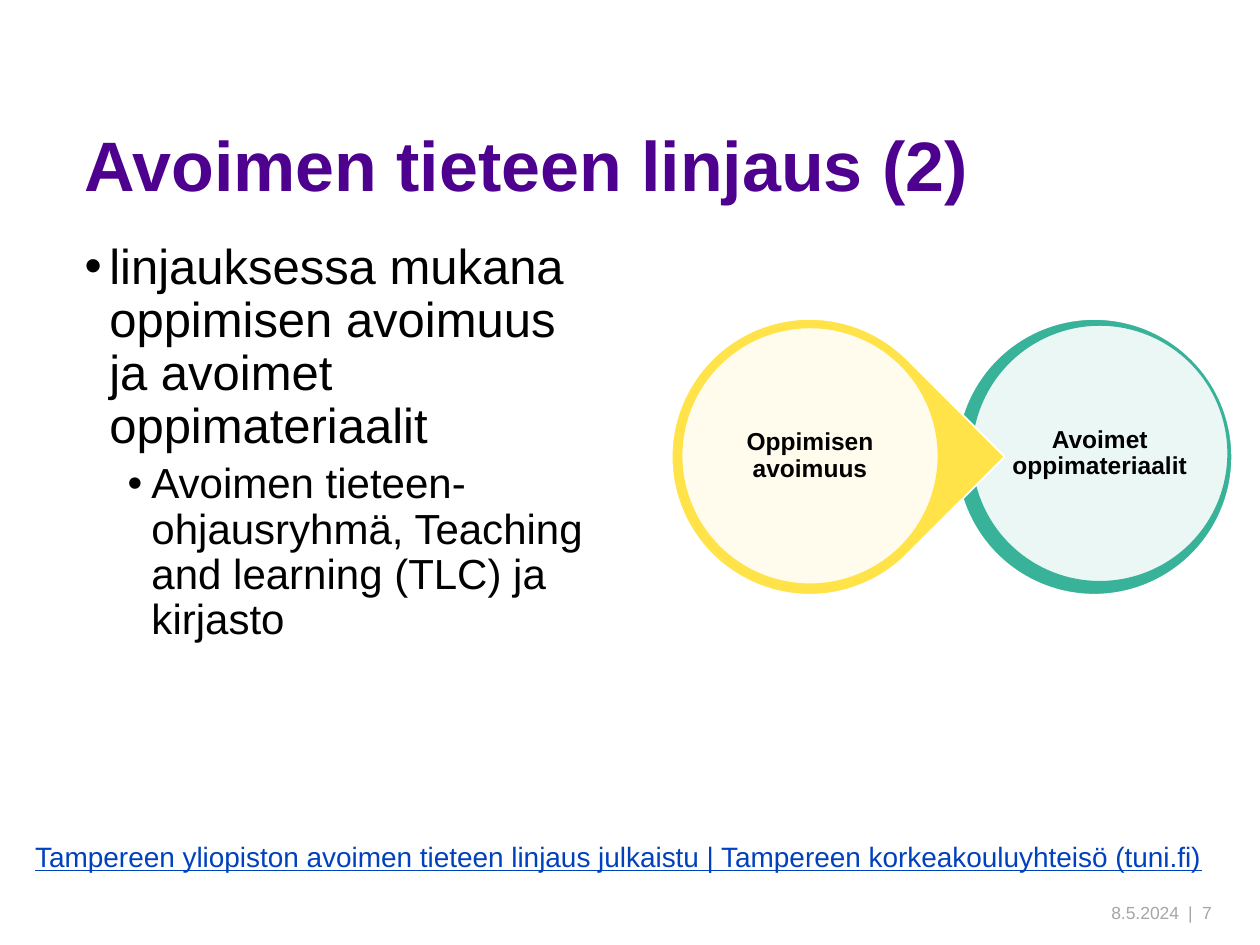
import dataclasses

import pptx
import pptx.dml.color
import pptx.enum.shapes
import pptx.enum.text
import pptx.oxml.ns
import pptx.util
from lxml import etree

Cm, Pt = pptx.util.Cm, pptx.util.Pt
ALIGN = pptx.enum.text.PP_ALIGN
ANCHOR = pptx.enum.text.MSO_ANCHOR
SHAPE = pptx.enum.shapes.MSO_SHAPE


@dataclasses.dataclass(frozen=True)
class Theme:
    font: str = "Arial"
    title: str = "4E008E"
    text: str = "000000"
    muted: str = "A6A6A6"
    link: str = "0041BE"
    paper: str = "FFFFFF"
    yellow: str = "FFE349"
    green: str = "38B399"
    title_size: int = 40
    body_sizes: tuple = (28, 24)
    link_size: int = 16
    label_size: int = 14
    footer_size: int = 10


def rgb(value):
    return pptx.dml.color.RGBColor.from_string(value)


def add_child(parent, tag, **attributes):
    child = etree.SubElement(parent, pptx.oxml.ns.qn(tag))
    for name, value in attributes.items():
        child.set(name, str(value))


class SlideBuilder:
    """Holds the theme and the slide being filled."""

    def __init__(self, slide, theme):
        self.slide = slide
        self.theme = theme

    def place(self, shape, left, top, width, height):
        shape.left, shape.top = Cm(left), Cm(top)
        shape.width, shape.height = Cm(width), Cm(height)

    def style(self, paragraph, size, color, bold=False, underline=False):
        for run in paragraph.runs:
            font = run.font
            font.name, font.size = self.theme.font, Pt(size)
            font.bold, font.underline = bold, underline
            font.color.rgb = rgb(color)

    def title(self, text, *box):
        title = self.slide.shapes.title
        self.place(title, *box)
        frame = title.text_frame
        frame.text = text
        frame.vertical_anchor = ANCHOR.MIDDLE
        heading = frame.paragraphs[0]
        heading.alignment = ALIGN.LEFT
        heading.line_spacing = 0.9
        self.style(heading, self.theme.title_size, self.theme.title, bold=True)

    def bullets(self, items, *box):
        """Fill the body placeholder with one item per level, top level first."""
        body = self.slide.placeholders[1]
        self.place(body, *box)
        frame = body.text_frame
        frame.text = "\n".join(items)
        frame.auto_size = pptx.enum.text.MSO_AUTO_SIZE.NONE
        indents = ((0.5, -0.5), (1.35, -0.48))
        for level, paragraph in enumerate(frame.paragraphs):
            paragraph.level = level
            properties = paragraph._p.get_or_add_pPr()
            margin, hanging = indents[level]
            properties.set("marL", str(Cm(margin)))
            properties.set("indent", str(Cm(hanging)))
            add_child(properties, "a:buFont", typeface=self.theme.font)
            add_child(properties, "a:buChar", char="•")
            paragraph.line_spacing = 0.9
            paragraph.space_before = Pt(5 * level)
            self.style(paragraph, self.theme.body_sizes[level], self.theme.text)

    def text(self, text, box, size, color, align=ALIGN.LEFT, anchor=ANCHOR.TOP,
             insets=(0.25, 0.13, 0.25, 0.13), line_spacing=1.0, **emphasis):
        frame = self.slide.shapes.add_textbox(*map(Cm, box)).text_frame
        frame.word_wrap = True
        frame.vertical_anchor = anchor
        (frame.margin_left, frame.margin_top,
         frame.margin_right, frame.margin_bottom) = map(Cm, insets)
        frame.text = text
        paragraph = frame.paragraphs[0]
        paragraph.alignment = align
        paragraph.line_spacing = line_spacing
        self.style(paragraph, size, color, **emphasis)

    def disc(self, kind, center, diameter, fill, line):
        x, y = center
        corner = Cm(x - diameter / 2), Cm(y - diameter / 2)
        disc = self.slide.shapes.add_shape(kind, *corner, Cm(diameter), Cm(diameter))
        disc.shadow.inherit = False
        disc.fill.solid()
        disc.fill.fore_color.rgb = rgb(fill)
        disc.line.color.rgb = rgb(line)
        disc.line.width = Pt(1)
        return disc

    def topic(self, label, kind, color, outer_center, inner_center, rotation=0):
        """Draw a coloured disc, a translucent disc on it and a centred label."""
        paper = self.theme.paper
        outer = self.disc(kind, outer_center, 5.56, color, paper)
        outer.rotation = rotation
        inner = self.disc(SHAPE.OVAL, inner_center, 5.18, paper, color)
        fill_color = inner.fill._xPr.find(".//" + pptx.oxml.ns.qn("a:srgbClr"))
        add_child(fill_color, "a:alpha", val=90000)
        x, y = inner_center
        side = 3.71
        self.text(label, (x - side / 2, y - side / 2, side, side),
                  self.theme.label_size, self.theme.text, ALIGN.CENTER,
                  ANCHOR.MIDDLE, (0.05,) * 4, 0.9, bold=True)

    def footer(self, text, left, width, align, right_inset):
        self.text(text, (left, 18.03, width, 0.71), self.theme.footer_size,
                  self.theme.muted, align, ANCHOR.BOTTOM,
                  (0, 0.13, right_inset, 0.13))


def main():
    deck = pptx.Presentation()
    deck.slide_width, deck.slide_height = Cm(25.4), Cm(19.05)
    theme = Theme()
    page = SlideBuilder(deck.slides.add_slide(deck.slide_layouts[1]), theme)

    page.title("Avoimen tieteen linjaus (2)", 1.45, 2.51, 22.81, 1.8)
    page.bullets(
        ["linjauksessa mukana oppimisen avoimuus ja avoimet oppimateriaalit",
         "Avoimen tieteen-ohjausryhmä, Teaching and learning (TLC) ja kirjasto"],
        1.45, 4.75, 10.8, 12.09)
    page.footer("8.5.2024", 20.24, 3.53, ALIGN.RIGHT, 0)
    page.footer("|  7", 23.95, 1.04, ALIGN.LEFT, 0.25)
    page.topic("Avoimet oppimateriaalit", SHAPE.OVAL, theme.green,
               (22.06, 9.21), (22.17, 9.14))
    page.topic("Oppimisen avoimuus", SHAPE.TEAR, theme.yellow,
               (16.32, 9.21), (16.33, 9.19), rotation=45)
    page.text("Tampereen yliopiston avoimen tieteen linjaus julkaistu | "
              "Tampereen korkeakouluyhteisö (tuni.fi)",
              (0.46, 16.79, 24.82, 0.94), theme.link_size, theme.link,
              underline=True)
    deck.save("out.pptx")


if __name__ == "__main__":
    main()
